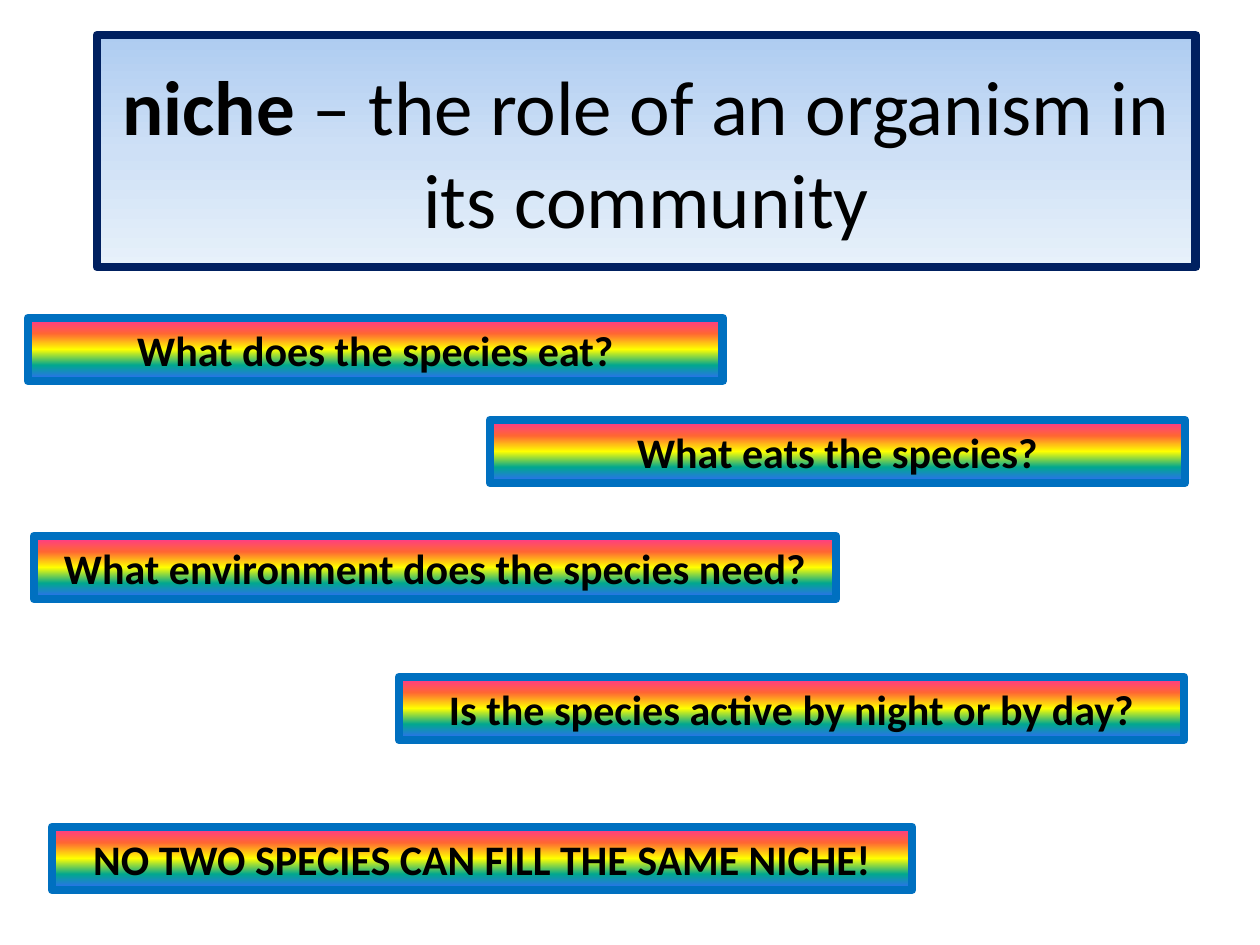
from lxml import etree
from pptx import Presentation
from pptx.dml.color import RGBColor
from pptx.enum.shapes import MSO_SHAPE
from pptx.enum.text import MSO_ANCHOR, PP_ALIGN
from pptx.oxml.ns import qn
from pptx.util import Emu, Pt

RECTANGLE = MSO_SHAPE.RECTANGLE
CENTER = PP_ALIGN.CENTER
TOP, MIDDLE = MSO_ANCHOR.TOP, MSO_ANCHOR.MIDDLE

PX_PER_INCH = 126
SKY = ["AECCF1", "CEE0F6", "E7F1FA"]
RAINBOW = ["FF3399", "FF6633", "FFFF00", "01A78F", "3366FF"]
NAVY, BLUE, BLACK = "002060", "0070C0", "000000"

DEFINITION_AREA = (97, 35, 1099, 232)
DEFINITION = [("niche", True), (" – the role of an organism in its community", False)]
BANNER_HEIGHT = 63
BANNERS = [
    (28, 318, 695, "What does the species eat?"),
    (490, 420, 695, "What eats the species?"),
    (34, 536, 802, "What environment does the species need?"),
    (399, 677, 785, "Is the species active by night or by day?"),
    (52, 827, 860, "NO TWO SPECIES CAN FILL THE SAME NICHE!"),
]


def px(length):
    """Turn a length in px into EMU."""
    return Emu(round(length * 914400 / PX_PER_INCH))


def color(value):
    """Turn a hex string into a colour."""
    return RGBColor.from_string(value)


def fill_gradient(box, colors):
    """Fill a box from top to bottom with evenly spaced colours."""
    box.fill.gradient()
    box.fill.gradient_angle = 270
    stops = box.element.spPr.find(qn("a:gradFill")).find(qn("a:gsLst"))
    for stop in list(stops):
        stops.remove(stop)
    for index, value in enumerate(colors):
        position = 100000 * index // (len(colors) - 1)
        stop = etree.SubElement(stops, qn("a:gs"), pos=str(position))
        etree.SubElement(stop, qn("a:srgbClr"), val=value)


def set_outline(box, value):
    """Give a box a thick outline with rounded corners."""
    box.line.color.rgb = color(value)
    box.line.width = Pt(5)
    etree.SubElement(box.element.spPr.find(qn("a:ln")), qn("a:round"))


def add_text(box, spans, size, anchor):
    """Write centred spans of plain or bold text into a box."""
    frame = box.text_frame
    frame.word_wrap = True
    frame.vertical_anchor = anchor
    para = frame.paragraphs[0]
    para.alignment = CENTER
    for text, bold in spans:
        span = para.add_run()
        span.text = text
        span.font.color.rgb = color(BLACK)
        formats = {"name": "Calibri", "size": Pt(size), "bold": bold}
        for name, value in formats.items():
            setattr(span.font, name, value)


def add_panel(page, area, colors, outline, spans, size, anchor):
    """Add an outlined gradient rectangle with text."""
    box = page.shapes.add_shape(RECTANGLE, *map(px, area))
    box.shadow.inherit = False
    fill_gradient(box, colors)
    set_outline(box, outline)
    add_text(box, spans, size, anchor)


def main():
    """Build the niche slide."""
    deck = Presentation()
    deck.slide_width, deck.slide_height = px(1260), px(945)
    page = deck.slides.add_slide(deck.slide_layouts[6])
    add_panel(page, DEFINITION_AREA, SKY, NAVY, DEFINITION, 44, MIDDLE)
    for left, top, width, text in BANNERS:
        area = (left, top, width, BANNER_HEIGHT)
        add_panel(page, area, RAINBOW, BLUE, [(text, True)], 24, TOP)
    deck.save("out.pptx")


if __name__ == "__main__":
    main()
